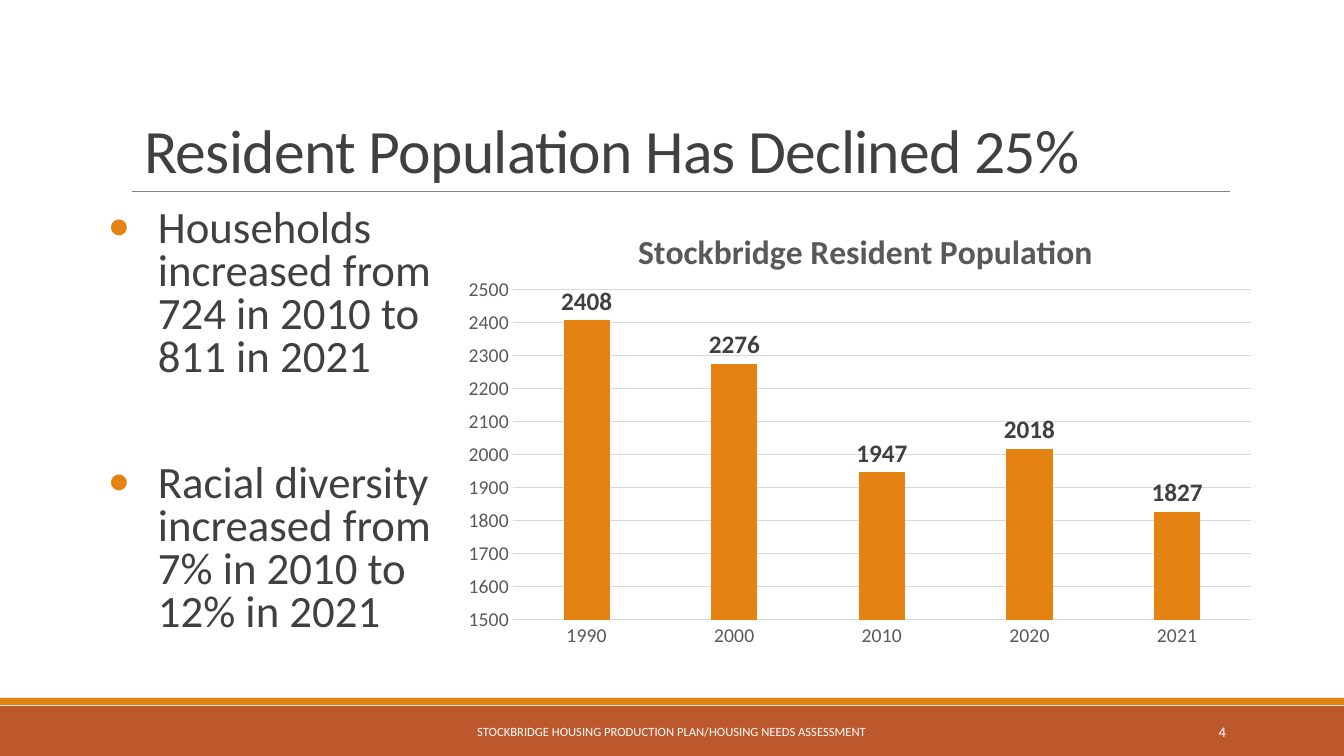
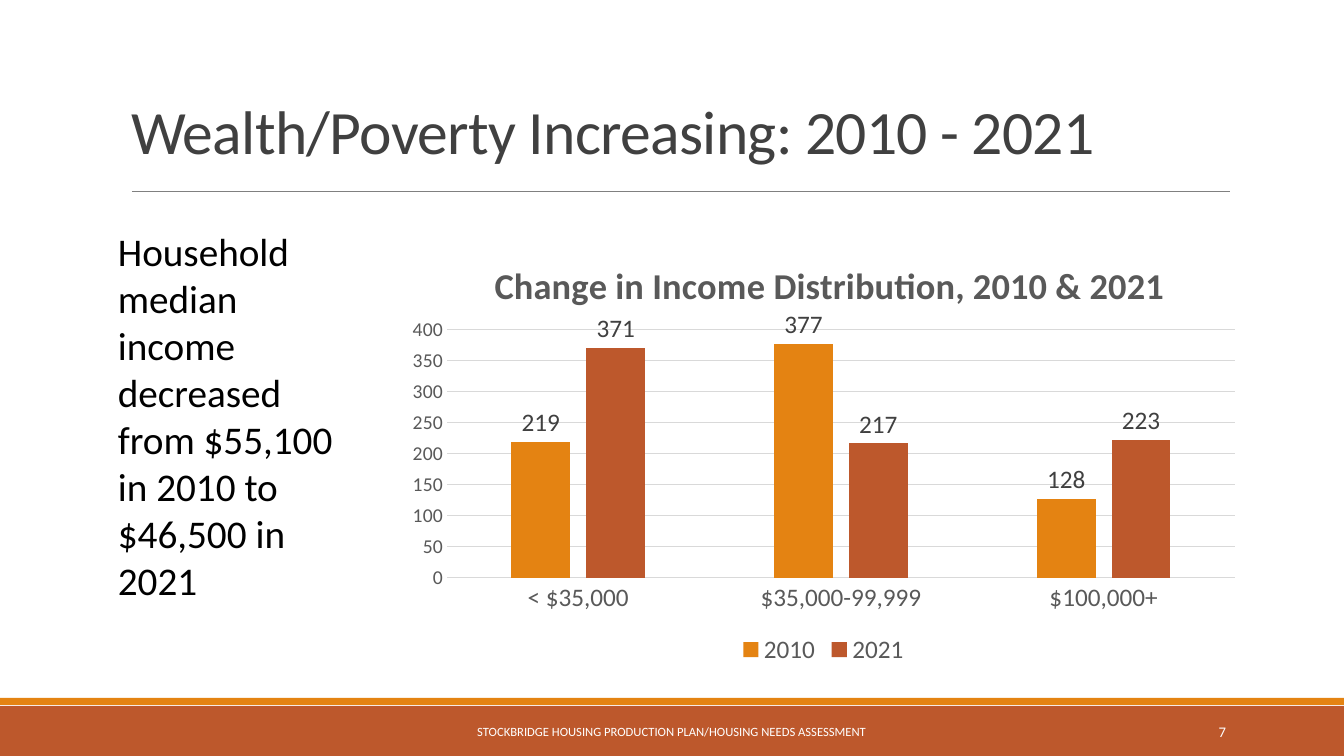
from lxml import etree
from pptx import Presentation
from pptx.chart.data import CategoryChartData
from pptx.dml.color import RGBColor
from pptx.enum.chart import XL_CHART_TYPE, XL_LABEL_POSITION, XL_LEGEND_POSITION, XL_TICK_MARK
from pptx.enum.shapes import MSO_CONNECTOR, MSO_SHAPE
from pptx.enum.text import MSO_ANCHOR, PP_ALIGN
from pptx.oxml.ns import qn
from pptx.util import Emu, Pt

COLUMN = XL_CHART_TYPE.COLUMN_CLUSTERED
ABOVE = XL_LABEL_POSITION.OUTSIDE_END
BELOW = XL_LEGEND_POSITION.BOTTOM
NO_TICK = XL_TICK_MARK.NONE
RECT = MSO_SHAPE.RECTANGLE
LINE = MSO_CONNECTOR.STRAIGHT
BOTTOM, MIDDLE, TOP = MSO_ANCHOR.BOTTOM, MSO_ANCHOR.MIDDLE, MSO_ANCHOR.TOP
LEFT, CENTER, RIGHT = PP_ALIGN.LEFT, PP_ALIGN.CENTER, PP_ALIGN.RIGHT

FACE = "Calibri"
ORANGE, RUST, WHITE, BLACK = "E48312", "BD582C", "FFFFFF", "000000"
INK, GRAY, PALE, RULE = "404040", "595959", "D9D9D9", "808080"
WIDE, HIGH = 1344, 756
FOOTER = "STOCKBRIDGE HOUSING PRODUCTION PLAN/HOUSING NEEDS ASSESSMENT"

POINTS = [
    "Households increased from 724 in 2010 to 811 in 2021",
    "Racial diversity increased from 7% in 2010 to 12% in 2021",
]
INCOME = "Household median income decreased from $55,100 in 2010 to $46,500 in 2021"

PEOPLE = {
    "title": "Stockbridge Resident Population", "size": 24,
    "box": (452, 204, 815, 454), "plot": (513, 290, 738, 330), "head": (632, 223),
    "cats": ["1990", "2000", "2010", "2020", "2021"],
    "series": [("Series 1", [2408, 2276, 1947, 2018, 1827], ORANGE)],
    "scale": (1500, 2500, 100), "format": "General",
    "catsize": 14, "bold": True, "legend": False,
}
WEALTH = {
    "title": "Change in Income Distribution, 2010 & 2021", "size": 26,
    "box": (395, 229, 857, 441), "plot": (447, 330, 788, 248), "head": (488, 254),
    "cats": ["< $35,000", "$35,000-99,999", "$100,000+"],
    "series": [("2010", [219, 377, 128], ORANGE), ("2021", [371, 217, 223], RUST)],
    "scale": (0, 400, 50), "format": "#,##0",
    "catsize": 18, "bold": False, "legend": True,
}


def px(n):
    return Emu(round(n * 914400 / 100.8))


def rgb(code):
    return RGBColor.from_string(code)


def style(font, size, color, bold=False):
    font.name, font.size, font.bold = FACE, Pt(size), bold
    font.color.rgb = rgb(color)


def bar(slide, top, height, color):
    shape = slide.shapes.add_shape(RECT, 0, px(top), px(WIDE), px(height))
    shape.shadow.inherit = False
    shape.fill.solid()
    shape.fill.fore_color.rgb = rgb(color)
    shape.line.fill.background()


def write(slide, box, text, size, color, align=LEFT, anchor=TOP):
    frame = slide.shapes.add_textbox(*map(px, box)).text_frame
    frame.word_wrap = True
    frame.vertical_anchor = anchor
    para = frame.paragraphs[0]
    para.text, para.alignment = text, align
    style(para.font, size, color)


def start(deck, title, height, number):
    slide = deck.slides.add_slide(deck.slide_layouts[5])
    bar(slide, 706, 50, RUST)
    bar(slide, 698, 7, ORANGE)
    rule = slide.shapes.add_connector(LINE, px(132), px(191), px(1230), px(191))
    rule.line.color.rgb, rule.line.width = rgb(RULE), Pt(0.5)
    etree.SubElement(rule._element.spPr, qn("a:effectLst"))
    head = slide.shapes.title
    head.left, head.top, head.width, head.height = map(px, (121, 31, 1109, height))
    frame = head.text_frame
    frame.vertical_anchor = BOTTOM
    para = frame.paragraphs[0]
    para.text, para.alignment, para.line_spacing = title, LEFT, 0.85
    style(para.font, 44, INK)
    para.font._element.set("spc", "-50")
    write(slide, (406, 712, 531, 40), FOOTER, 9, WHITE, CENTER, MIDDLE)
    write(slide, (1092, 712, 144, 40), number, 10.5, WHITE, RIGHT, MIDDLE)
    return slide


def bullets(slide, box, items):
    frame = slide.shapes.add_textbox(*map(px, box)).text_frame
    frame.word_wrap = True
    frame.margin_left = frame.margin_right = 0
    for i, item in enumerate(items):
        para = frame.add_paragraph() if i else frame.paragraphs[0]
        para.text, para.line_spacing = item, 0.8
        para.space_before, para.space_after = Pt(57 if i else 12), Pt(2)
        props = para._p.get_or_add_pPr()
        props.set("marL", str(px(50)))
        props.set("indent", str(-px(50)))
        tint = etree.SubElement(props, qn("a:buClr"))
        etree.SubElement(tint, qn("a:srgbClr"), val=ORANGE)
        etree.SubElement(props, qn("a:buFont"), typeface=FACE)
        etree.SubElement(props, qn("a:buChar"), char="•")
        style(para.font, 32, INK)


def place(parent, index, values):
    for old in parent.findall(qn("c:layout")):
        parent.remove(old)
    layout = etree.Element(qn("c:layout"))
    parent.insert(index, layout)
    manual = etree.SubElement(layout, qn("c:manualLayout"))
    for tag, value in values:
        etree.SubElement(manual, qn("c:" + tag), val=str(value))


def draw(slide, data):
    source = CategoryChartData(number_format=data["format"])
    source.categories = data["cats"]
    for name, values, _ in data["series"]:
        source.add_series(name, values)
    x, y, w, h = data["box"]
    chart = slide.shapes.add_chart(COLUMN, *map(px, data["box"]), source).chart
    style(chart.font, 10, BLACK)

    chart.has_title = True
    para = chart.chart_title.text_frame.paragraphs[0]
    para.text = data["title"]
    style(para.font, data["size"], GRAY, True)
    left, top = data["head"]
    edge = [("xMode", "edge"), ("yMode", "edge")]
    spot = [("x", round((left - x) / w, 4)), ("y", round((top - y) / h, 4))]
    place(chart.chart_title._element, 1, edge + spot)
    left, top, wide, high = data["plot"]
    spot = [("x", (left - x) / w), ("y", (top - y) / h), ("w", wide / w), ("h", high / h)]
    area = chart._chartSpace.chart.plotArea
    place(area, 0, [("layoutTarget", "inner")] + edge + [(k, round(v, 4)) for k, v in spot])

    across, up = chart.category_axis, chart.value_axis
    for axis, size in ((across, data["catsize"]), (up, 14)):
        axis.major_tick_mark = axis.minor_tick_mark = NO_TICK
        style(axis.tick_labels.font, size, GRAY)
    up.minimum_scale, up.maximum_scale, up.major_unit = data["scale"]
    up.has_major_gridlines = True
    up.format.line.fill.background()
    for line in (across.format.line, up.major_gridlines.format.line):
        line.color.rgb, line.width = rgb(PALE), Pt(0.75)

    plot = chart.plots[0]
    plot.gap_width, plot.overlap, plot.vary_by_categories = 219, -27, False
    for series, (_, _, color) in zip(plot.series, data["series"]):
        series.format.fill.solid()
        series.format.fill.fore_color.rgb = rgb(color)
        labels = series.data_labels
        labels.show_value, labels.position = True, ABOVE
        style(labels.font, 18, INK, data["bold"])

    chart.has_legend = data["legend"]
    if data["legend"]:
        chart.legend.position = BELOW
        chart.legend.include_in_layout = False
        style(chart.legend.font, 18, GRAY)


def main():
    deck = Presentation()
    deck.slide_width, deck.slide_height = px(WIDE), px(HIGH)
    slide = start(deck, " Resident Population Has Declined 25%", 160, "4")
    bullets(slide, (108, 204, 337, 470), POINTS)
    draw(slide, PEOPLE)
    slide = start(deck, "Wealth/Poverty Increasing: 2010 - 2021", 141, "7")
    write(slide, (108, 222, 258, 390), INCOME, 28, BLACK)
    draw(slide, WEALTH)
    deck.save("out.pptx")


if __name__ == "__main__":
    main()
